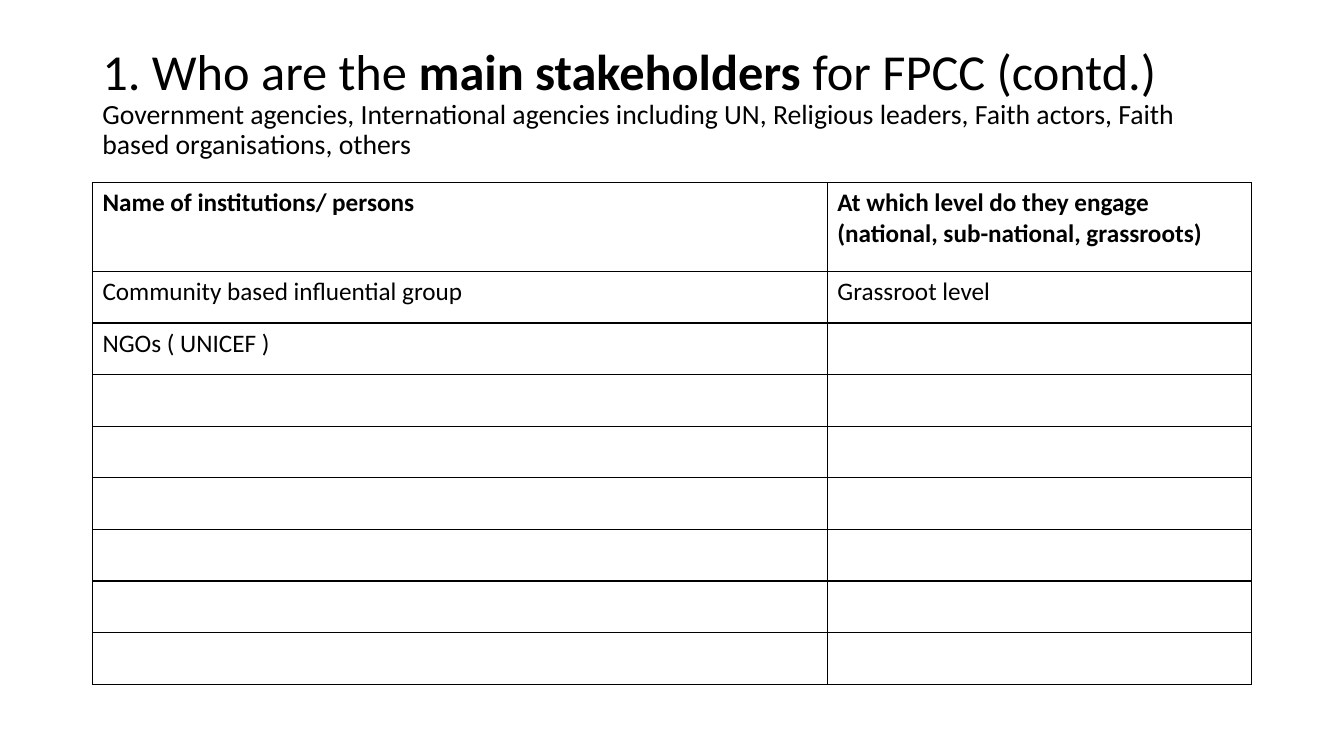
"""Build the slide listing the main stakeholders for FPCC."""
from lxml.etree import SubElement
from pptx import Presentation
from pptx.dml.color import RGBColor
from pptx.enum.text import MSO_ANCHOR
from pptx.oxml.ns import qn
from pptx.util import Cm, Pt

FONT, INK, PAPER = "Calibri", "000000", "FFFFFF"
TITLE = [
    ("1. Who are the ", 36, False),
    ("main stakeholders", 36, True),
    (" for FPCC (contd.)", 36, False),
    ("Government agencies, International agencies including UN, Religious leaders, "
     "Faith actors, Faith based organisations, others", 19.8, False),
]
HEADINGS = (
    "Name of institutions/ persons",
    "At which level do they engage\n(national, sub-national, grassroots)",
)
STAKEHOLDERS = [
    ("Community based influential group", "Grassroot level"),
    ("NGOs ( UNICEF )", ""),
]
EMPTY_ROWS = 6

LEFT, WIDTH = 2.33, 29.21
TITLE_TOP, TITLE_HEIGHT = 1.32, 2.59
TABLE_TOP, HEADING_HEIGHT, ROW_HEIGHT = 4.6, 2.24, 1.3
COLUMN_WIDTHS = (18.52, 10.69)


def colour(hex_string):
    return RGBColor.from_string(hex_string)


def style(font, size):
    font.name, font.size = FONT, Pt(size)
    font.color.rgb = colour(INK)


def add_borders(cell):
    properties = cell._tc.get_or_add_tcPr()
    for position, side in enumerate(("lnL", "lnR", "lnT", "lnB")):
        border = SubElement(properties, qn(f"a:{side}"), w=str(Pt(1)))
        properties.insert(position, border)
        ink = SubElement(SubElement(border, qn("a:solidFill")), qn("a:srgbClr"))
        ink.set("val", INK)


def add_title(slide):
    box = slide.shapes.add_textbox(Cm(LEFT), Cm(TITLE_TOP), Cm(WIDTH), Cm(TITLE_HEIGHT))
    frame = box.text_frame
    frame.word_wrap = True
    frame.vertical_anchor = MSO_ANCHOR.MIDDLE
    heading = frame.paragraphs[0]
    heading.line_spacing = 0.9
    for text, size, bold in TITLE:
        if text == TITLE[-1][0]:
            heading.add_line_break()
        run = heading.add_run()
        run.text = text
        style(run.font, size)
        run.font.bold = bold


def add_stakeholder_table(slide):
    rows = [HEADINGS, *STAKEHOLDERS, *[("", "")] * EMPTY_ROWS]
    heights = [HEADING_HEIGHT] + [ROW_HEIGHT] * (len(rows) - 1)
    table = slide.shapes.add_table(
        len(rows), len(HEADINGS), Cm(LEFT), Cm(TABLE_TOP), Cm(WIDTH), Cm(sum(heights))
    ).table
    table.first_row = table.horz_banding = False
    for column, width in zip(table.columns, COLUMN_WIDTHS):
        column.width = Cm(width)
    for row, height, texts in zip(table.rows, heights, rows):
        row.height = Cm(height)
        for cell, text in zip(row.cells, texts):
            cell.text = text
            cell.fill.solid()
            cell.fill.fore_color.rgb = colour(PAPER)
            add_borders(cell)
            for paragraph in cell.text_frame.paragraphs:
                style(paragraph.font, 18)
                for run in paragraph.runs:
                    run.font.bold = texts is HEADINGS


def main():
    deck = Presentation()
    deck.slide_width, deck.slide_height = Cm(33.87), Cm(19.05)
    slide = deck.slides.add_slide(deck.slide_layouts[6])
    add_title(slide)
    add_stakeholder_table(slide)
    deck.save("out.pptx")


if __name__ == "__main__":
    main()
